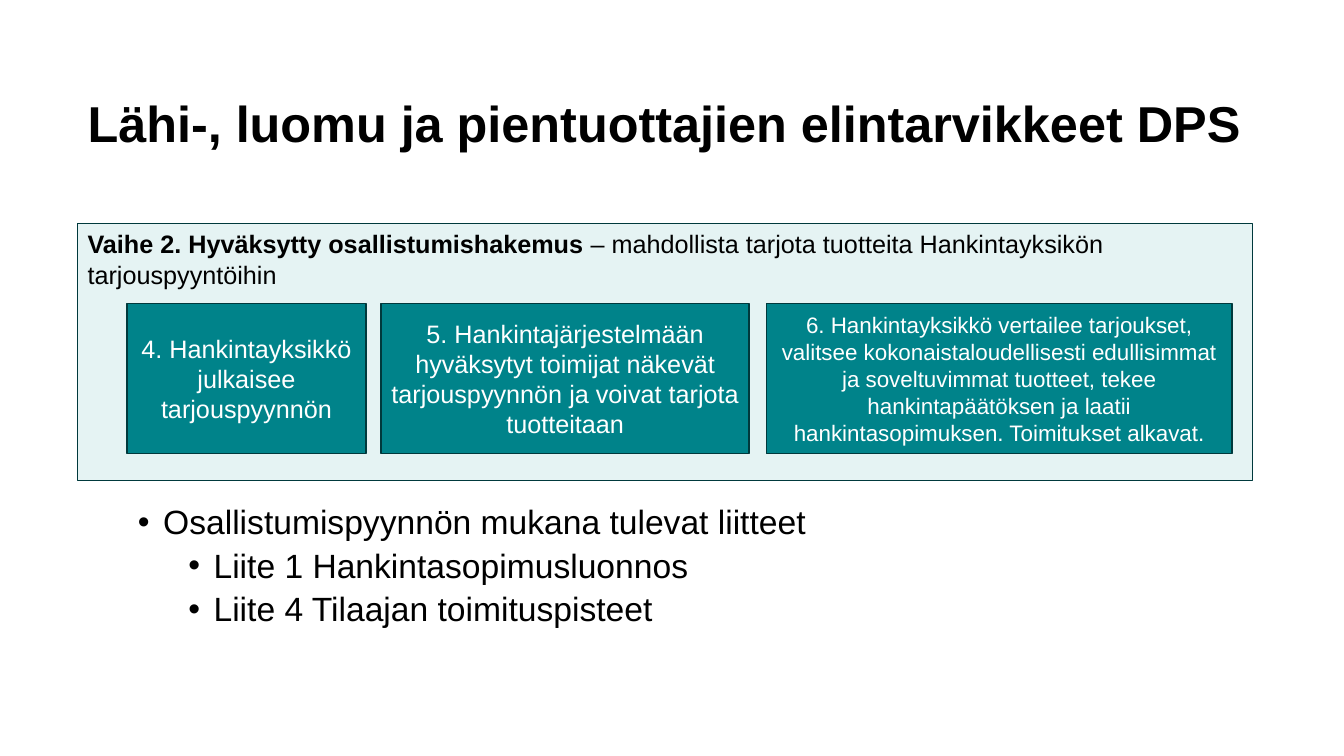
"""Build the slide on phase 2 of the food procurement DPS."""
from lxml import etree
from pptx import Presentation
from pptx.dml.color import RGBColor
from pptx.enum.shapes import MSO_SHAPE as Shape
from pptx.enum.text import MSO_ANCHOR as Anchor, PP_ALIGN as Align
from pptx.oxml.ns import qn
from pptx.util import Inches, Pt

BLACK = RGBColor(0x00, 0x00, 0x00)
WHITE = RGBColor(0xFF, 0xFF, 0xFF)
PALE_TEAL = RGBColor(0xE5, 0xF3, 0xF3)
TEAL = RGBColor(0x00, 0x83, 0x8A)
DARK_TEAL = RGBColor(0x00, 0x39, 0x3C)

LEFT, WIDTH = 0.77, 11.65
STEP_TOP, STEP_HEIGHT = 3.01, 1.49

STEPS = [
    (1.26, 2.37, 18, "4. Hankintayksikkö julkaisee tarjouspyynnön"),
    (3.78, 3.65, 18, "5. Hankintajärjestelmään hyväksytyt toimijat näkevät "
                     "tarjouspyynnön ja voivat tarjota tuotteitaan"),
    (7.6, 4.62, 16, "6. Hankintayksikkö vertailee tarjoukset, valitsee "
                    "kokonaistaloudellisesti edullisimmat ja soveltuvimmat "
                    "tuotteet, tekee hankintapäätöksen ja laatii "
                    "hankintasopimuksen. Toimitukset alkavat."),
]
ATTACHMENTS = [
    (1, "Osallistumispyynnön mukana tulevat liitteet"),
    (2, "Liite 1 Hankintasopimusluonnos"),
    (2, "Liite 4 Tilaajan toimituspisteet"),
]


def style_run(run, size, color, bold=False):
    run.font.name = "Arial"
    run.font.size = Pt(size)
    run.font.bold = bold
    run.font.color.rgb = color


def add_box(left, top, width, height, fill, anchor):
    box = slide.shapes.add_shape(
        Shape.RECTANGLE, Inches(left), Inches(top), Inches(width), Inches(height))
    box.shadow.inherit = False
    box.fill.solid()
    box.fill.fore_color.rgb = fill
    box.line.color.rgb = DARK_TEAL
    box.line.width = Pt(1)
    box.text_frame.word_wrap = True
    box.text_frame.vertical_anchor = anchor
    return box.text_frame


presentation = Presentation()
presentation.slide_width = Inches(13.33)
presentation.slide_height = Inches(7.5)
slide = presentation.slides.add_slide(presentation.slide_layouts[6])

title = slide.shapes.add_textbox(
    Inches(LEFT), Inches(0.93), Inches(WIDTH), Inches(1.29)).text_frame
title.word_wrap = True
title.margin_right = 0
title.text = "Lähi-, luomu ja pientuottajien elintarvikkeet DPS"
title.paragraphs[0].line_spacing = 0.9
style_run(title.paragraphs[0].runs[0], 36, BLACK, bold=True)

phase = add_box(LEFT, 2.22, WIDTH, 2.55, PALE_TEAL, Anchor.TOP)
paragraph = phase.paragraphs[0]
paragraph.alignment = Align.LEFT
for text, bold in [
    ("Vaihe 2. Hyväksytty osallistumishakemus ", True),
    ("– mahdollista tarjota tuotteita Hankintayksikön tarjouspyyntöihin", False),
]:
    run = paragraph.add_run()
    run.text = text
    style_run(run, 18, BLACK, bold)

for left, width, size, text in STEPS:
    step = add_box(left, STEP_TOP, width, STEP_HEIGHT, TEAL, Anchor.MIDDLE)
    step.text = text
    step.paragraphs[0].alignment = Align.CENTER
    style_run(step.paragraphs[0].runs[0], size, WHITE)

attachments = slide.shapes.add_textbox(
    Inches(LEFT), Inches(4.97), Inches(12.12), Inches(1.39)).text_frame
attachments.word_wrap = True
for index, (level, text) in enumerate(ATTACHMENTS):
    paragraph = attachments.add_paragraph() if index else attachments.paragraphs[0]
    paragraph.text = text
    paragraph.level = level
    paragraph.line_spacing = 0.9
    paragraph.space_before = Pt(5 if index else 0)
    properties = paragraph._p.get_or_add_pPr()
    properties.set("marL", str(Inches(0.25 + 0.5 * level)))
    properties.set("indent", str(Inches(-0.25)))
    etree.SubElement(properties, qn("a:buFont")).set("typeface", "Arial")
    etree.SubElement(properties, qn("a:buChar")).set("char", "•")
    style_run(paragraph.runs[0], 24, BLACK)

presentation.save("out.pptx")
